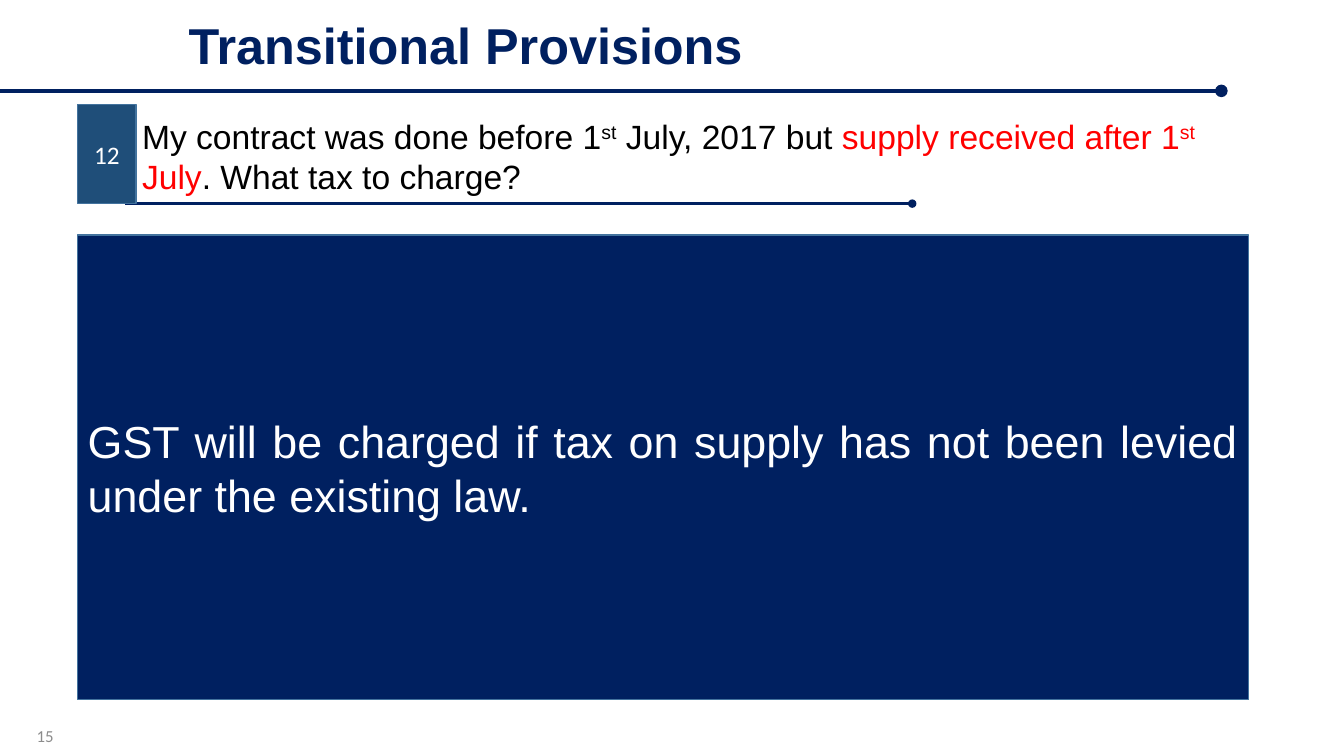
"""Builds the Transitional Provisions question slide."""
from dataclasses import dataclass

from lxml.etree import SubElement
from pptx import Presentation
from pptx.dml.color import RGBColor
from pptx.enum.shapes import MSO_CONNECTOR, MSO_SHAPE
from pptx.enum.text import MSO_ANCHOR, MSO_AUTO_SIZE, PP_ALIGN
from pptx.oxml.ns import qn
from pptx.util import Cm, Pt


@dataclass(frozen=True)
class Theme:
    """Colours, fonts and type sizes of the slide."""
    navy: str = "002060"
    steel: str = "1F4E79"
    border: str = "43739E"
    white: str = "FFFFFF"
    black: str = "000000"
    red: str = "FF0000"
    grey: str = "8C8C8C"
    main_font: str = "Arial"
    label_font: str = "Calibri"
    title_size: int = 36
    answer_size: int = 32
    question_size: int = 24
    badge_size: int = 18
    page_size: int = 12


def write(paragraph, text, *, size, color, font, bold=False, raised=False):
    """Add one formatted run to a paragraph."""
    run = paragraph.add_run()
    run.text = text
    run.font.size = Pt(size)
    run.font.name = font
    run.font.bold = bold
    run.font.color.rgb = RGBColor.from_string(color)
    if raised:
        run.font._element.set("baseline", "30000")


class SlideBuilder:
    """Holds the theme and the current slide."""

    def __init__(self, theme, slide):
        """Keep the theme and the slide to draw on."""
        self.theme = theme
        self.slide = slide

    def paragraph(self, shape, align, anchor):
        """Prepare the text frame and return its first paragraph."""
        frame = shape.text_frame
        frame.word_wrap = True
        frame.auto_size = MSO_AUTO_SIZE.NONE
        frame.vertical_anchor = anchor
        frame.paragraphs[0].alignment = align
        return frame.paragraphs[0]

    def title(self, text, left, top, width, height):
        """Move the title placeholder and fill it."""
        title = self.slide.shapes.title
        title.left, title.top = Cm(left), Cm(top)
        title.width, title.height = Cm(width), Cm(height)
        write(self.paragraph(title, PP_ALIGN.LEFT, MSO_ANCHOR.TOP), text, bold=True,
              size=self.theme.title_size, color=self.theme.navy, font=self.theme.main_font)

    def rule(self, start, end, y, weight):
        """Draw a horizontal rule ending in a dot."""
        rule = self.slide.shapes.add_connector(
            MSO_CONNECTOR.STRAIGHT, Cm(start), Cm(y), Cm(end), Cm(y))
        rule.line.color.rgb = RGBColor.from_string(self.theme.navy)
        rule.line.width = Pt(weight)
        SubElement(rule.line._get_or_add_ln(), qn("a:tailEnd"), type="oval")
        SubElement(rule._element.spPr, qn("a:effectLst"))

    def panel(self, text, left, top, width, height, *, fill, align, size, font):
        """Draw a filled rectangle with white text."""
        panel = self.slide.shapes.add_shape(
            MSO_SHAPE.RECTANGLE, Cm(left), Cm(top), Cm(width), Cm(height))
        panel.shadow.inherit = False
        panel.fill.solid()
        panel.fill.fore_color.rgb = RGBColor.from_string(fill)
        panel.line.color.rgb = RGBColor.from_string(self.theme.border)
        panel.line.width = Pt(1)
        write(self.paragraph(panel, align, MSO_ANCHOR.MIDDLE), text,
              size=size, color=self.theme.white, font=font)

    def text(self, left, top, width, height, *, align=PP_ALIGN.LEFT, anchor=MSO_ANCHOR.TOP):
        """Add a text box and return its paragraph."""
        box = self.slide.shapes.add_textbox(Cm(left), Cm(top), Cm(width), Cm(height))
        return self.paragraph(box, align, anchor)


def main():
    """Build and save the slide."""
    theme = Theme()
    deck = Presentation()
    deck.slide_width, deck.slide_height = Cm(33.87), Cm(19.05)
    builder = SlideBuilder(theme, deck.slides.add_slide(deck.slide_layouts[5]))

    builder.title("Transitional Provisions", 4.5, 0.23, 21.1, 1.8)
    builder.rule(0, 30.78, 2.29, 3)
    builder.rule(3.15, 22.99, 5.13, 2)
    builder.panel("12", 1.96, 2.64, 1.47, 2.49, fill=theme.steel, align=PP_ALIGN.CENTER,
                  size=theme.badge_size, font=theme.label_font)

    question = builder.text(3.33, 2.79, 28.17, 2.31)
    for words, color, raised in (
        ("My contract was done before 1", theme.black, False),
        ("st", theme.black, True),
        (" July, 2017 but ", theme.black, False),
        ("supply received after 1", theme.red, False),
        ("st", theme.red, True),
        (" July", theme.red, False),
        (". What tax to charge?", theme.black, False),
    ):
        write(question, words, size=theme.question_size, color=color,
              font=theme.main_font, raised=raised)

    builder.panel(
        "GST will be charged if tax on supply has not been levied under the existing law.",
        1.96, 5.92, 29.51, 11.71, fill=theme.navy, align=PP_ALIGN.JUSTIFY,
        size=theme.answer_size, font=theme.main_font)

    page_number = builder.text(0, 18.03, 1.6, 1.02, align=PP_ALIGN.RIGHT,
                               anchor=MSO_ANCHOR.MIDDLE)
    write(page_number, "15", size=theme.page_size, color=theme.grey, font=theme.label_font)

    deck.save("out.pptx")


if __name__ == "__main__":
    main()
